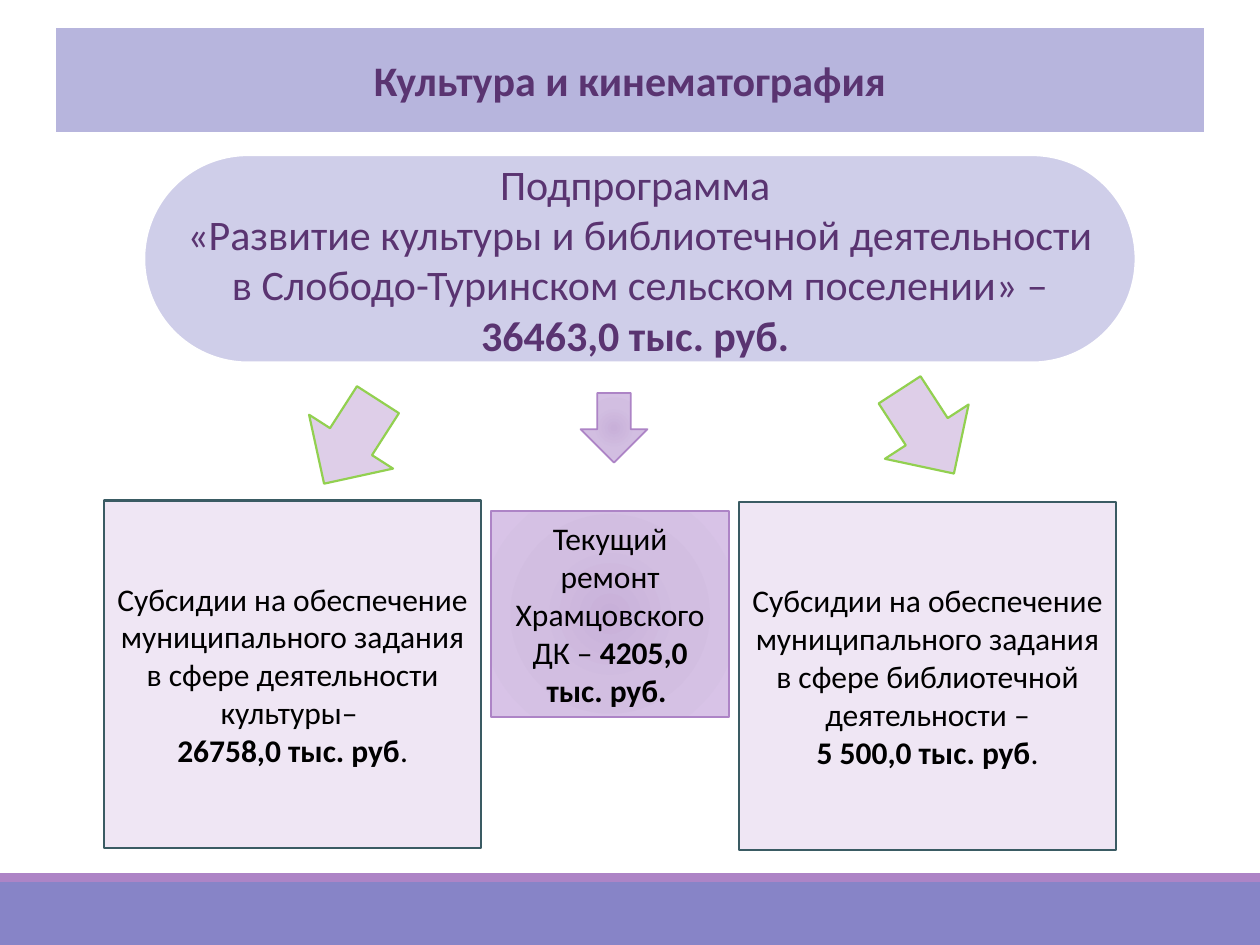
from dataclasses import dataclass

from lxml import etree
from pptx import Presentation
from pptx.dml.color import RGBColor
from pptx.enum.shapes import MSO_SHAPE
from pptx.enum.text import MSO_ANCHOR, MSO_AUTO_SIZE, PP_ALIGN
from pptx.oxml import parse_xml
from pptx.oxml.ns import nsdecls, qn
from pptx.util import Pt


@dataclass(frozen=True)
class Theme:
    font: str = "Calibri"
    heading_size: int = 24
    body_size: int = 18
    heading: str = "5A3471"
    body: str = "000000"
    footer: str = "8784C7"
    accent: str = "AD84C6"
    title_fill: str = "B7B5DD"
    program_fill: str = "CFCEE9"
    pill_line: str = "FFFFFF"
    subsidy_fill: str = "EFE6F4"
    subsidy_line: str = "3A5B63"
    arrow_fill: str = "DECEE8"
    arrow_line: str = "92D050"
    repair_glow: tuple = ((0, "C8B0D9"), (45, "D2BEE1"), (100, "D8C3E7"))


class SlideBuilder:
    def __init__(self, slide, theme):
        self.slide = slide
        self.theme = theme

    def paint(self, shape, fill, line=None, width=1.25):
        if isinstance(fill, str):
            shape.fill.solid()
            shape.fill.fore_color.rgb = RGBColor.from_string(fill)
        else:
            self.glow(shape, fill)
        if line:
            shape.line.color.rgb = RGBColor.from_string(line)
            shape.line.width = Pt(width)
        else:
            shape.line.fill.background()

    def glow(self, shape, stops):
        """Radial gradient that runs from the centre outwards."""
        gradient = parse_xml(
            f'<a:gradFill {nsdecls("a")} rotWithShape="1"><a:gsLst/>'
            '<a:path path="circle"><a:fillToRect l="50000" t="50000" r="50000" b="50000"/>'
            "</a:path></a:gradFill>")
        for position, color in stops:
            stop = etree.SubElement(gradient[0], qn("a:gs"), pos=str(position * 1000))
            etree.SubElement(stop, qn("a:srgbClr"), val=color)
        shape.element.spPr.find(qn("a:prstGeom")).addnext(gradient)

    def add_text(self, shape, paragraphs, size, color):
        """Each paragraph is a list of (text, bold) runs."""
        frame = shape.text_frame
        frame.word_wrap = True
        frame.auto_size = MSO_AUTO_SIZE.NONE
        frame.vertical_anchor = MSO_ANCHOR.MIDDLE
        for index, runs in enumerate(paragraphs):
            paragraph = frame.add_paragraph() if index else frame.paragraphs[0]
            paragraph.alignment = PP_ALIGN.CENTER
            paragraph.line_spacing = 1.0
            paragraph.space_before = Pt(0)
            for text, bold in runs:
                run = paragraph.add_run()
                run.text = text
                run.font.name = self.theme.font
                run.font.size = Pt(size)
                run.font.bold = bold
                run.font.color.rgb = RGBColor.from_string(color)

    def title(self, box, text):
        title = self.slide.shapes.title
        title.left, title.top, title.width, title.height = map(Pt, box)
        title.element.spPr.find(qn("a:xfrm")).addnext(parse_xml(
            f'<a:prstGeom {nsdecls("a")} prst="roundRect"><a:avLst>'
            '<a:gd name="adj" fmla="val 50000"/></a:avLst></a:prstGeom>'))
        self.paint(title, self.theme.title_fill, self.theme.pill_line)
        self.add_text(title, [[(text, True)]], self.theme.heading_size, self.theme.heading)

    def shape(self, kind, box, fill, line=None, width=1.25):
        shape = self.slide.shapes.add_shape(kind, *map(Pt, box))
        shape.shadow.inherit = False
        self.paint(shape, fill, line, width)
        return shape

    def pill(self, box, paragraphs):
        pill = self.shape(MSO_SHAPE.ROUNDED_RECTANGLE, box,
                          self.theme.program_fill, self.theme.pill_line)
        pill.adjustments[0] = 0.5
        self.add_text(pill, paragraphs, self.theme.heading_size, self.theme.heading)

    def card(self, box, paragraphs, fill, line, width=1.25):
        card = self.shape(MSO_SHAPE.RECTANGLE, box, fill, line, width)
        self.add_text(card, paragraphs, self.theme.body_size, self.theme.body)

    def arrow(self, box, fill, line, width=1.25, rotation=0):
        arrow = self.shape(MSO_SHAPE.DOWN_ARROW, box, fill, line, width)
        arrow.rotation = rotation


def main():
    theme = Theme()
    deck = Presentation()
    deck.slide_width, deck.slide_height = Pt(720), Pt(540)
    culture = SlideBuilder(deck.slides.add_slide(deck.slide_layouts[5]), theme)

    # Footer bands
    culture.shape(MSO_SHAPE.RECTANGLE, (0, 504, 720, 36), theme.footer)
    culture.shape(MSO_SHAPE.RECTANGLE, (0, 499, 720, 5), theme.accent)

    # Title and subprogram
    culture.title((31.3, 15.2, 657.4, 60.8), "Культура и кинематография")
    culture.pill((82.4, 88.6, 566.6, 118.6), [
        [("Подпрограмма ", False)],
        [("«Развитие культуры и библиотечной деятельности "
          "в Слободо-Туринском сельском поселении» – ", False),
         ("36463,0 тыс. руб. ", True)],
    ])

    # Subsidies, each with its slanted arrow
    subsidies = [
        ((59.5, 286), (172.1, 223.9), 32.7, "деятельности культуры– ", "26758,0 тыс. руб"),
        ((422.3, 287), (501.1, 218.2), 327, "библиотечной деятельности –", "5 500,0 тыс. руб"),
    ]
    for card_corner, arrow_corner, rotation, field, amount in subsidies:
        culture.arrow((*arrow_corner, 57, 57), theme.arrow_fill, theme.arrow_line,
                      rotation=rotation)
        culture.card((*card_corner, 215.5, 198.5), [
            [("Субсидии на обеспечение муниципального задания в сфере " + field, False)],
            [(amount, True), (".", False)],
        ], theme.subsidy_fill, theme.subsidy_line)

    # Repair of the culture house
    culture.card((280.6, 291.8, 136.1, 118), [
        [("Текущий ремонт Храмцовского ДК – ", False), ("4205,0 тыс. руб. ", True)],
    ], theme.repair_glow, theme.accent, 1)
    culture.arrow((331.8, 224.6, 38.2, 39.8), theme.repair_glow, theme.accent, 1)

    deck.save("out.pptx")


if __name__ == "__main__":
    main()
